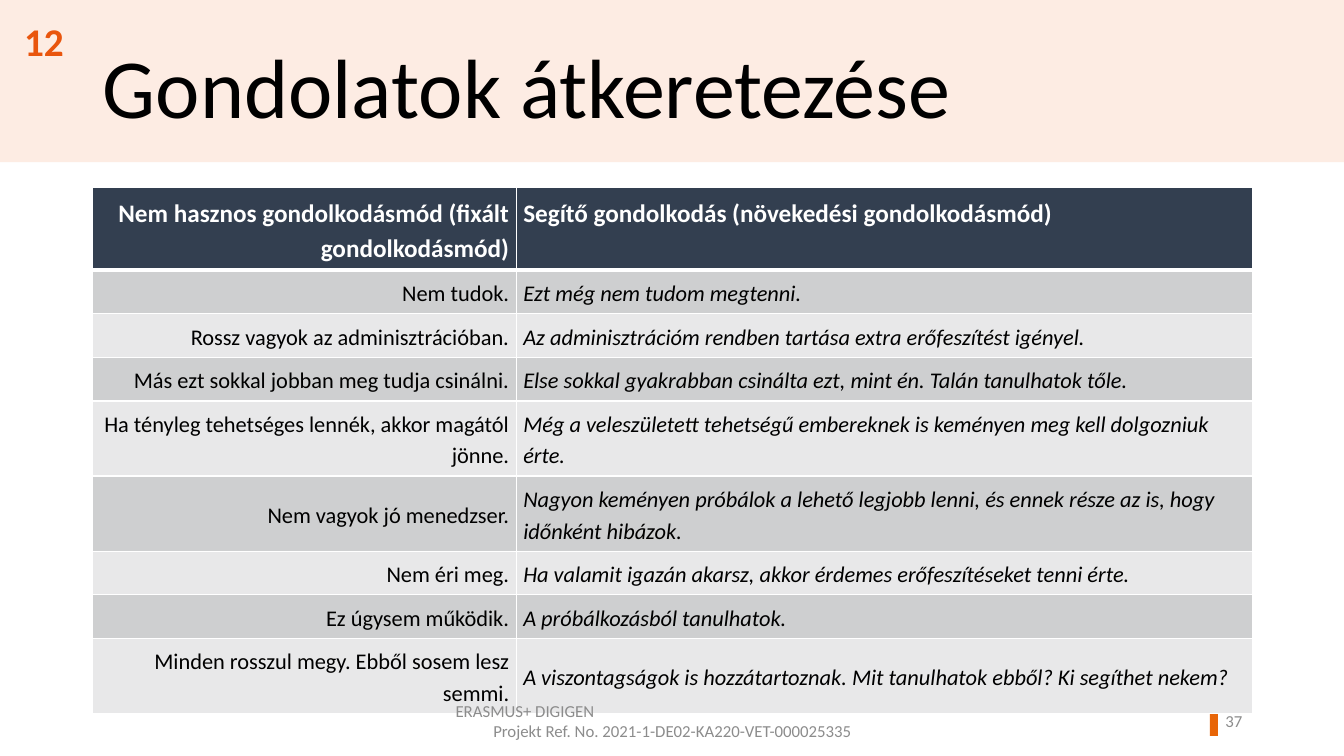
import pptx
import pptx.dml.color
import pptx.enum.shapes
import pptx.enum.text
import pptx.oxml
import pptx.oxml.ns
import pptx.util
from pptx.util import Inches

ALIGN = pptx.enum.text.PP_ALIGN
ANCHOR = pptx.enum.text.MSO_ANCHOR

THEME = {
    "font": "Calibri",
    "colors": {
        "band": "FDECE3", "accent": "E86507", "number": "E9550D",
        "header": "333F50", "dark_row": "CECFD0", "light_row": "E8E8E9",
        "white": "FFFFFF", "text": "000000", "footer": "8C8C8C",
    },
    "sizes": {"title": 60, "number": 28, "header": 18, "body": 16, "footer": 12},
}


def color(name):
    return pptx.dml.color.RGBColor.from_string(THEME["colors"][name])


def style(para, size, color_name, align=ALIGN.LEFT, bold=False, italic=False):
    para.alignment = align
    para.font.name = THEME["font"]
    para.font.size = pptx.util.Pt(THEME["sizes"][size])
    para.font.color.rgb = color(color_name)
    para.font.bold = bold
    para.font.italic = italic


deck = pptx.Presentation()
deck.slide_width, deck.slide_height = Inches(13.33), Inches(7.5)
page = deck.slides.add_slide(deck.slide_layouts[5])

# Title band and footer accent
for left, top, width, height, fill in [
    (0, 0, 13.33, 1.61, "band"),
    (12, 7, 0.08, 0.3, "accent"),
]:
    block = page.shapes.add_shape(
        pptx.enum.shapes.MSO_SHAPE.RECTANGLE,
        Inches(left), Inches(top), Inches(width), Inches(height))
    block.shadow.inherit = False
    block.fill.solid()
    block.fill.fore_color.rgb = color(fill)
    block.line.fill.background()

# Title, brought in front of the band
title = page.shapes.title
title.element.getparent().append(title.element)
title.left, title.top = Inches(0.92), Inches(0.41)
title.width, title.height = Inches(9.93), Inches(0.85)
title.text_frame.text = "Gondolatok átkeretezése"
title.text_frame.auto_size = pptx.enum.text.MSO_AUTO_SIZE.NONE
title.text_frame.vertical_anchor = ANCHOR.TOP
title.text_frame.paragraphs[0].line_spacing = 0.9
style(title.text_frame.paragraphs[0], "title", "text")

# Table of thoughts: unhelpful on the left, helpful on the right
thoughts = [
    ("Nem hasznos gondolkodásmód (fixált gondolkodásmód)",
     "Segítő gondolkodás (növekedési gondolkodásmód)"),
    ("Nem tudok.", "Ezt még nem tudom megtenni."),
    ("Rossz vagyok az adminisztrációban.",
     "Az adminisztrációm rendben tartása extra erőfeszítést igényel."),
    ("Más ezt sokkal jobban meg tudja csinálni.",
     "Else sokkal gyakrabban csinálta ezt, mint én. Talán tanulhatok tőle."),
    ("Ha tényleg tehetséges lennék, akkor magától jönne.",
     "Még a veleszületett tehetségű embereknek is keményen meg kell dolgozniuk érte."),
    ("Nem vagyok jó menedzser.",
     "Nagyon keményen próbálok a lehető legjobb lenni, és ennek része az is, "
     "hogy időnként hibázok."),
    ("Nem éri meg.",
     "Ha valamit igazán akarsz, akkor érdemes erőfeszítéseket tenni érte."),
    ("Ez úgysem működik.", "A próbálkozásból tanulhatok."),
    ("Minden rosszul megy. Ebből sosem lesz semmi.",
     "A viszontagságok is hozzátartoznak. Mit tanulhatok ebből? Ki segíthet nekem?"),
]
one_line, two_lines = 0.42, 0.73
row_heights = [0.8] + [one_line] * 3 + [two_lines] * 2 + [one_line] * 2 + [two_lines]
table = page.shapes.add_table(
    len(thoughts), 2, Inches(0.92), Inches(1.86),
    Inches(11.5), Inches(sum(row_heights))).table
table.columns[0].width, table.columns[1].width = Inches(4.2), Inches(7.3)

for row, (pair, height) in enumerate(zip(thoughts, row_heights)):
    table.rows[row].height = Inches(height)
    is_header = row == 0
    fill = "header" if is_header else ("dark_row" if row % 2 else "light_row")
    for column, text in enumerate(pair):
        cell = table.cell(row, column)
        cell.text = text
        cell.margin_left = cell.margin_right = Inches(0.07)
        cell.margin_top = cell.margin_bottom = Inches(0.06)
        cell.vertical_anchor = ANCHOR.TOP if is_header else ANCHOR.MIDDLE
        para = cell.text_frame.paragraphs[0]
        para.line_spacing = 1.15
        para.space_after = pptx.util.Pt(10)
        style(para, "header" if is_header else "body",
              "white" if is_header else "text",
              ALIGN.LEFT if column else ALIGN.RIGHT,
              bold=is_header, italic=column == 1 and not is_header)

        # White borders, thicker around the bottom of the header
        for side in "LRTB":
            thick = (row, side) in [(0, "B"), (1, "T")]
            cell._tc.get_or_add_tcPr().append(pptx.oxml.parse_xml(
                f'<a:ln{side} {pptx.oxml.ns.nsdecls("a")} '
                f'w="{pptx.util.Pt(3 if thick else 1)}"><a:solidFill>'
                f'<a:srgbClr val="{THEME["colors"]["white"]}"/>'
                f'</a:solidFill></a:ln{side}>'))
        cell.fill.solid()
        cell.fill.fore_color.rgb = color(fill)

# Footer, page number and section number
labels = [
    (4.42, 6.95, 4.5, 0.4, ANCHOR.MIDDLE, "footer", "footer", False, [
        ("ERASMUS+ DIGIGEN", ALIGN.LEFT),
        ("Projekt Ref. No. 2021-1-DE02-KA220-VET-000025335", ALIGN.CENTER)]),
    (11.77, 6.95, 0.65, 0.4, ANCHOR.MIDDLE, "footer", "footer", False,
     [("37", ALIGN.RIGHT)]),
    (0.09, 0.12, 0.69, 0.57, ANCHOR.TOP, "number", "number", True,
     [("12", ALIGN.CENTER)]),
]
for left, top, width, height, anchor, size, color_name, bold, lines in labels:
    box = page.shapes.add_textbox(
        Inches(left), Inches(top), Inches(width), Inches(height))
    frame = box.text_frame
    frame.word_wrap = True
    frame.vertical_anchor = anchor
    frame.text = "\n".join(text for text, align in lines)
    for para, (text, align) in zip(frame.paragraphs, lines):
        style(para, size, color_name, align, bold)

deck.save("out.pptx")
